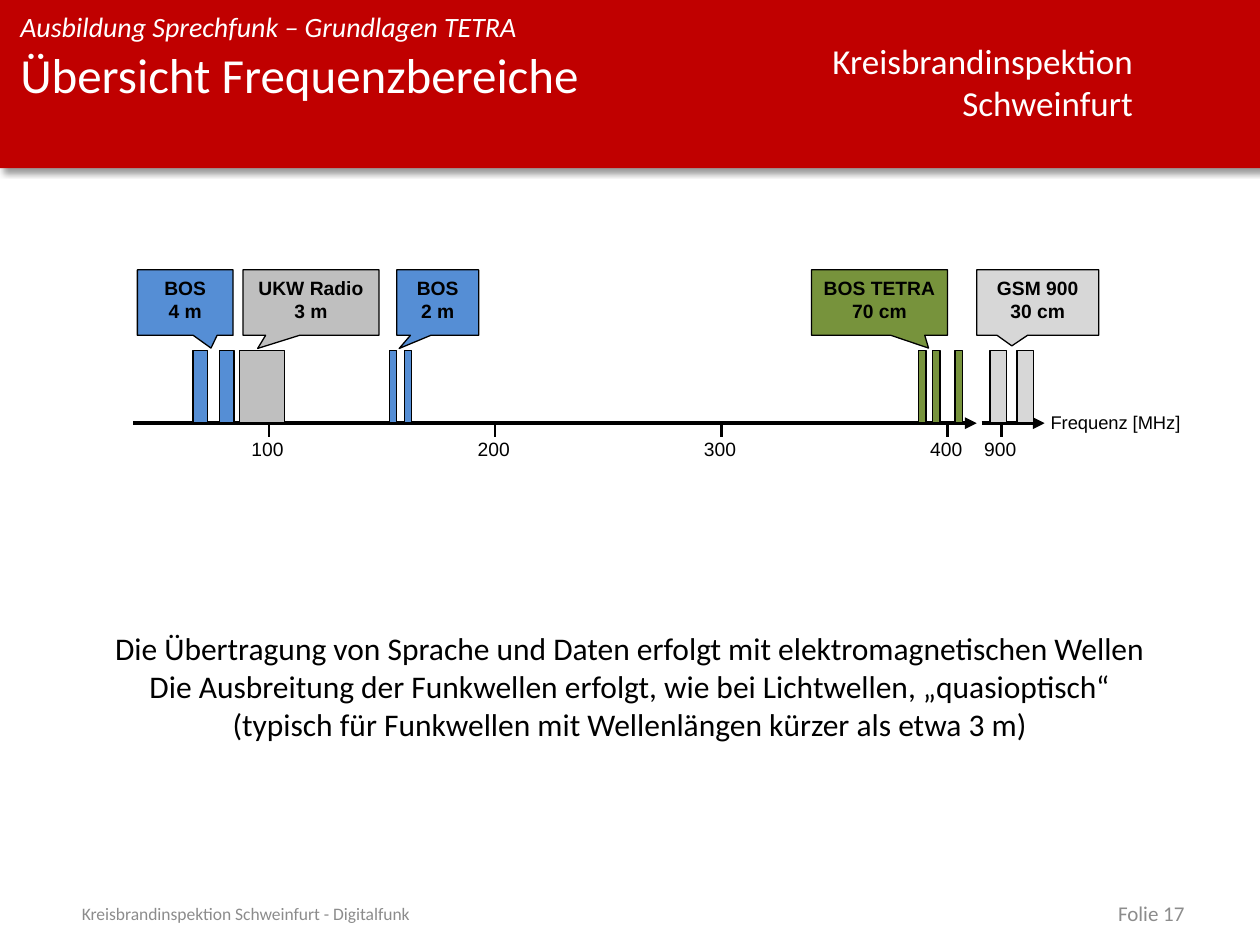
"""Builds a slide on the radio frequency ranges used by emergency services."""
from lxml.etree import SubElement
from pptx import Presentation
from pptx.dml.color import RGBColor
from pptx.enum.shapes import MSO_CONNECTOR, MSO_SHAPE
from pptx.enum.text import MSO_ANCHOR, PP_ALIGN
from pptx.oxml.ns import qn
from pptx.util import Cm, Pt

LEFT, CENTER, RIGHT = PP_ALIGN.LEFT, PP_ALIGN.CENTER, PP_ALIGN.RIGHT
TOP, MIDDLE = MSO_ANCHOR.TOP, MSO_ANCHOR.MIDDLE
BLACK, WHITE, RED, MUTED = "000000", "FFFFFF", "C00000", "8C8C8C"
BLUE, GRAY, LIGHT, GREEN = "558ED5", "BFBFBF", "D7D7D7", "77933C"
AXIS_Y = 8.53


def color(code):
    return RGBColor.from_string(code)


def write(shape, text, size, font, code, align=LEFT, anchor=TOP, wrap=False,
          inset=(0.25, 0.13), bold=False, italic=False):
    frame = shape.text_frame
    frame.text = text
    frame.word_wrap = wrap
    frame.vertical_anchor = anchor
    frame.margin_left = frame.margin_right = Cm(inset[0])
    frame.margin_top = frame.margin_bottom = Cm(inset[1])
    for para in frame.paragraphs:
        para.alignment = align
        for span in para.runs:
            span.font.size = Pt(size)
            span.font.name = font
            span.font.bold = bold
            span.font.italic = italic
            span.font.color.rgb = color(code)


deck = Presentation()
deck.slide_width, deck.slide_height = Cm(25.4), Cm(19.05)
page = deck.slides.add_slide(deck.slide_layouts[6])
shapes = page.shapes

banner = shapes.add_shape(MSO_SHAPE.RECTANGLE, 0, 0, Cm(25.4), Cm(3.39))
banner.fill.solid()
banner.fill.fore_color.rgb = color(RED)
banner.line.fill.background()
banner.shadow.inherit = False
effects = banner._element.spPr.find(qn("a:effectLst"))
shadow = SubElement(effects, qn("a:outerShdw"), blurRad=str(Pt(4)),
                    dist=str(Pt(3)), dir="2700000", algn="tl", rotWithShape="0")
shade = SubElement(shadow, qn("a:srgbClr"), val=BLACK)
SubElement(shade, qn("a:alpha"), val="40000")

statement = (
    "Die Übertragung von Sprache und Daten erfolgt mit elektromagnetischen Wellen\n"
    "Die Ausbreitung der Funkwellen erfolgt, wie bei Lichtwellen, „quasioptisch“\n"
    "(typisch für Funkwellen mit Wellenlängen kürzer als etwa 3 m)")
flush = {"inset": (0, 0), "wrap": True}
footer = {"anchor": MIDDLE, "wrap": True}
texts = [
    (16.46, 0.66, 6.63, 1.96, "Kreisbrandinspektion\nSchweinfurt", 20, WHITE,
     {"align": RIGHT}),
    (0.41, 0.2, 16.05, 0.69, "Ausbildung Sprechfunk – Grundlagen TETRA", 16, WHITE,
     {"italic": True, **flush}),
    (0.41, 0.89, 16.05, 2.51, "Übersicht Frequenzbereiche", 28, WHITE, flush),
    (1.4, 18.16, 15.34, 0.51, "Kreisbrandinspektion Schweinfurt - Digitalfunk", 10,
     MUTED, footer),
    (18.21, 18.16, 5.92, 0.51, "Folie 17", 12, MUTED, {"align": RIGHT, **footer}),
    (1.93, 12.55, 21.54, 2.57, statement, 18, BLACK, {"align": CENTER}),
]
for left, top, width, height, text, size, code, options in texts:
    box = shapes.add_textbox(Cm(left), Cm(top), Cm(width), Cm(height))
    write(box, text, size, "Calibri", code, **options)

ticks = {str(100 * (i + 1)): 5.42 + 4.56 * i for i in range(4)}
ticks["900"] = 20.19
lines = [(2.69, AXIS_Y, 19.69, AXIS_Y), (19.79, AXIS_Y, 21.06, AXIS_Y)]
lines += [(x, AXIS_Y, x, AXIS_Y + 0.28) for x in ticks.values()]
for x1, y1, x2, y2 in lines:
    line = shapes.add_connector(MSO_CONNECTOR.STRAIGHT, Cm(x1), Cm(y1), Cm(x2), Cm(y2))
    is_axis = y1 == y2
    line.line.color.rgb = color(BLACK)
    line.line.width = Pt(2.25 if is_axis else 1.5)
    if is_axis:
        SubElement(line.line._get_or_add_ln(), qn("a:tailEnd"), type="triangle")
    SubElement(line._element.spPr, qn("a:effectLst"))

labels = [(x - 0.6, 8.69, 1.3, 0.74, text, 11) for text, x in ticks.items()]
labels.append((20.93, 8.15, 3.2, 0.71, "Frequenz [MHz]", 10.5))
for left, top, width, height, text, size in labels:
    box = shapes.add_textbox(Cm(left), Cm(top), Cm(width), Cm(height))
    write(box, text, size, "Arial", BLACK)

bands = [
    ("BOS\n4 m", BLUE, 2.77, 1.93, 0.269, 0.696, 0.3, [3.89, 4.42]),
    ("UKW Radio\n3 m", GRAY, 4.9, 2.74, -0.392, 0.701, 0.91, [4.83]),
    ("BOS\n2 m", BLUE, 8, 1.65, -0.47, 0.701, 0.15, [7.85, 8.15]),
    ("BOS TETRA\n70 cm", GREEN, 16.36, 2.74, 0.361, 0.696, 0.15, [18.52, 18.8, 19.25]),
    ("GSM 900\n30 cm", LIGHT, 19.69, 2.46, -0.212, 0.662, 0.33, [19.96, 20.5]),
]
for text, code, left, width, tip_x, tip_y, bar_width, bar_lefts in bands:
    bars = [shapes.add_shape(MSO_SHAPE.RECTANGLE, Cm(x), Cm(AXIS_Y - 1.47),
                             Cm(bar_width), Cm(1.47)) for x in bar_lefts]
    callout = shapes.add_shape(MSO_SHAPE.RECTANGULAR_CALLOUT, Cm(left), Cm(5.44),
                               Cm(width), Cm(1.32))
    callout.adjustments[0], callout.adjustments[1] = tip_x, tip_y
    write(callout, text, 11, "Arial", BLACK, align=CENTER, bold=True)
    for shape in [*bars, callout]:
        shape.fill.solid()
        shape.fill.fore_color.rgb = color(code)
        shape.line.color.rgb = color(BLACK)
        shape.line.width = Pt(0.75)
        shape.shadow.inherit = False

deck.save("out.pptx")
